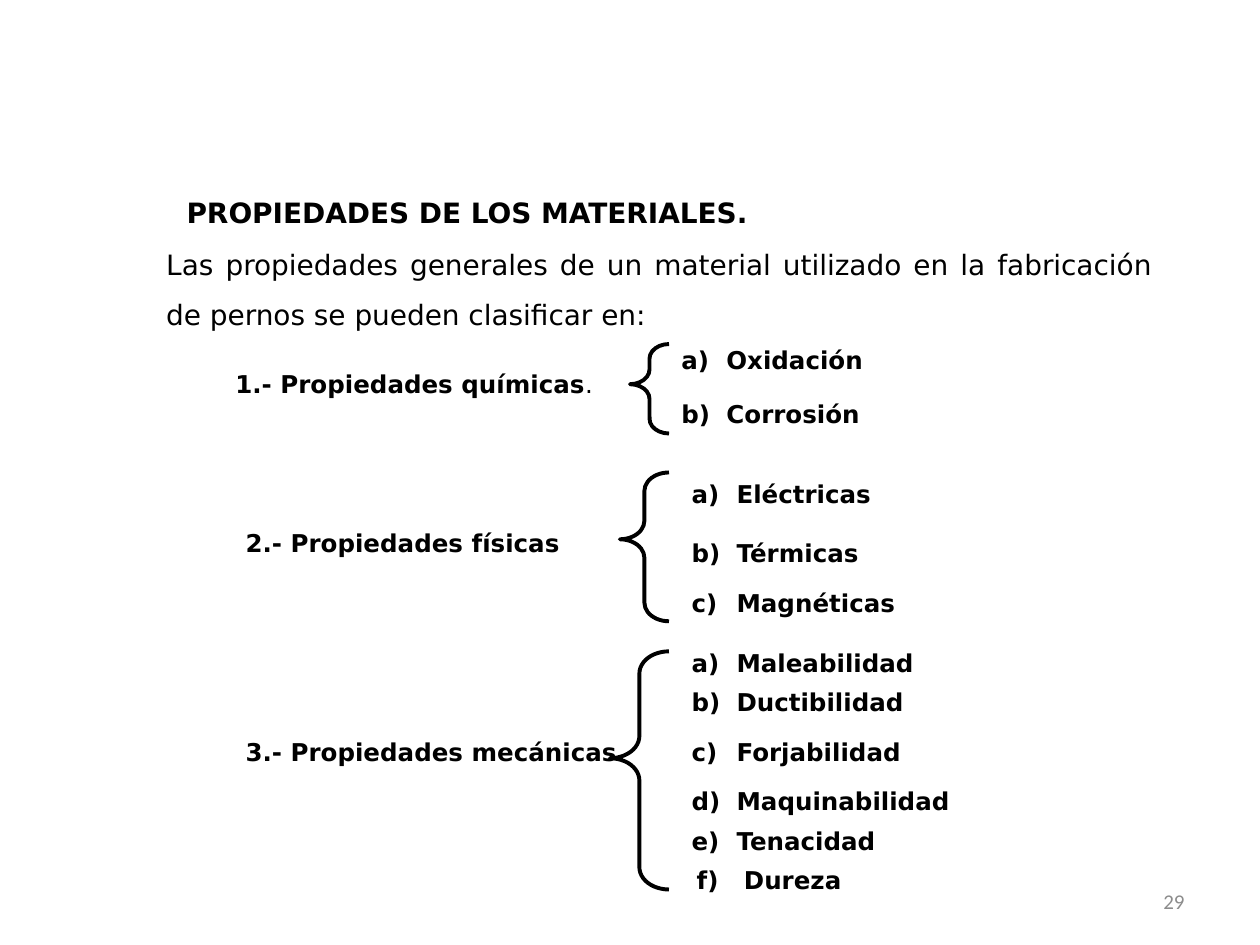
from lxml import etree
from pptx import Presentation
from pptx.dml.color import RGBColor
from pptx.enum.shapes import MSO_SHAPE
from pptx.enum.text import MSO_ANCHOR, MSO_AUTO_SIZE, PP_ALIGN
from pptx.oxml.ns import qn
from pptx.util import Pt

LEFT_BRACE = MSO_SHAPE.LEFT_BRACE
TOP, MIDDLE = MSO_ANCHOR.TOP, MSO_ANCHOR.MIDDLE
NO_AUTOFIT = MSO_AUTO_SIZE.NONE
LEFT, RIGHT, JUSTIFY = PP_ALIGN.LEFT, PP_ALIGN.RIGHT, PP_ALIGN.JUSTIFY

THEME = {
    "font": "DejaVu Sans",
    "number_font": "Calibri",
    "ink": RGBColor(0, 0, 0),
    "number_ink": RGBColor(0x8C, 0x8C, 0x8C),
    "heading": Pt(16),
    "label": Pt(14),
    "number": Pt(12),
    "brace": Pt(2.25),
}
ROW_HEIGHT = 24.5


def prepare(box, left, top, width, height, align=LEFT, spacing=1.0, anchor=TOP):
    """Place a text shape and return its first paragraph."""
    box.left, box.top, box.width, box.height = (
        Pt(value) for value in (left, top, width, height))
    frame = box.text_frame
    frame.word_wrap = True
    frame.auto_size = NO_AUTOFIT
    frame.vertical_anchor = anchor
    para = frame.paragraphs[0]
    para.alignment = align
    para.line_spacing = spacing
    para.space_before = Pt(0)
    return para


def add_span(para, text, size, bold=False, font=THEME["font"], color=THEME["ink"]):
    span = para.add_run()
    span.text = text
    span.font.name = font
    span.font.size = size
    span.font.bold = bold
    span.font.color.rgb = color


deck = Presentation()
deck.slide_width, deck.slide_height = Pt(720), Pt(540)
page = deck.slides.add_slide(deck.slide_layouts[1])
shapes = page.shapes

# Title
para = prepare(shapes.title, 99.4, 111.6, 532.8, 39.6, spacing=Pt(15.6))
add_span(para, "PROPIEDADES DE LOS MATERIALES.", THEME["heading"], bold=True)

# Introduction, without a bullet
para = prepare(page.placeholders[1], 87.8, 128.2, 578.2, 65.5, JUSTIFY, 1.5)
properties = para._p.get_or_add_pPr()
properties.set("marL", "0")
properties.set("indent", "0")
etree.SubElement(properties, qn("a:buNone"))
add_span(para, "Las propiedades generales de un material utilizado en la "
         "fabricación de pernos se pueden clasificar en:", THEME["heading"])

# Each group: label spans and box, brace box, then items as
# (letter, name, left, top, width, line spacing)
groups = [
    ([("1.- Propiedades químicas", True), (".", False)], (127.4, 207.4, 232.6),
     (360, 196.6, 22.3, 51.1),
     [("a)", "Oxidación", 382.3, 185, 136, 1.5),
      ("b)", "Corrosión", 382.3, 224.6, 118, 1)]),
    ([("2.- Propiedades físicas", True)], (133.2, 298.1, 193.7),
     (354.2, 270, 28.1, 85),
     [("a)", "Eléctricas", 388.1, 270, 118, 1),
      ("b)", "Térmicas", 388.1, 303.8, 113.8, 1),
      ("c)", "Magnéticas", 388.1, 332.6, 129.6, 1)]),
    ([("3.- Propiedades mecánicas", True)], (133.2, 417.6, 231.8),
     (348.5, 372.2, 33.8, 136.1),
     [("a)", "Maleabilidad", 388.1, 366.5, 141.1, 1),
      ("b)", "Ductibilidad", 388.1, 388.8, 136.8, 1),
      ("c)", "Forjabilidad", 388.1, 417.6, 134.6, 1),
      ("d)", "Maquinabilidad", 388.1, 445.7, 162, 1),
      ("e)", "Tenacidad", 388.1, 468.7, 121.7, 1),
      ("f)", "Dureza", 391, 491, 98.6, 1)]),
]

for label, (left, top, width), brace_box, items in groups:
    # Group label
    box = shapes.add_textbox(0, 0, 0, 0)
    para = prepare(box, left, top, width, ROW_HEIGHT)
    box.text_frame.margin_right = 0
    for text, bold in label:
        add_span(para, text, THEME["label"], bold)

    # Brace
    brace = shapes.add_shape(LEFT_BRACE, *(Pt(value) for value in brace_box))
    brace.shadow.inherit = False
    brace.fill.background()
    brace.line.color.rgb = THEME["ink"]
    brace.line.width = THEME["brace"]
    brace.adjustments[0], brace.adjustments[1] = 0.376, 0.449

    # Lettered items, with the name on a tab stop
    for letter, name, left, top, width, spacing in items:
        box = shapes.add_textbox(0, 0, 0, 0)
        height = 36 if spacing > 1 else ROW_HEIGHT
        para = prepare(box, left, top, width, height, spacing=spacing)
        box.text_frame.margin_right = 0
        tabs = etree.SubElement(para._p.get_or_add_pPr(), qn("a:tabLst"))
        gap = Pt(27) if letter == "f)" else Pt(25.7)
        etree.SubElement(tabs, qn("a:tab"), pos=str(int(gap)), algn="l")
        add_span(para, f"{letter}\t{name}", THEME["label"], bold=True)

# Page number
box = shapes.add_textbox(0, 0, 0, 0)
para = prepare(box, 516.2, 500.4, 167.8, 28.8, RIGHT, anchor=MIDDLE)
add_span(para, "29", THEME["number"], font=THEME["number_font"],
         color=THEME["number_ink"])

deck.save("out.pptx")
